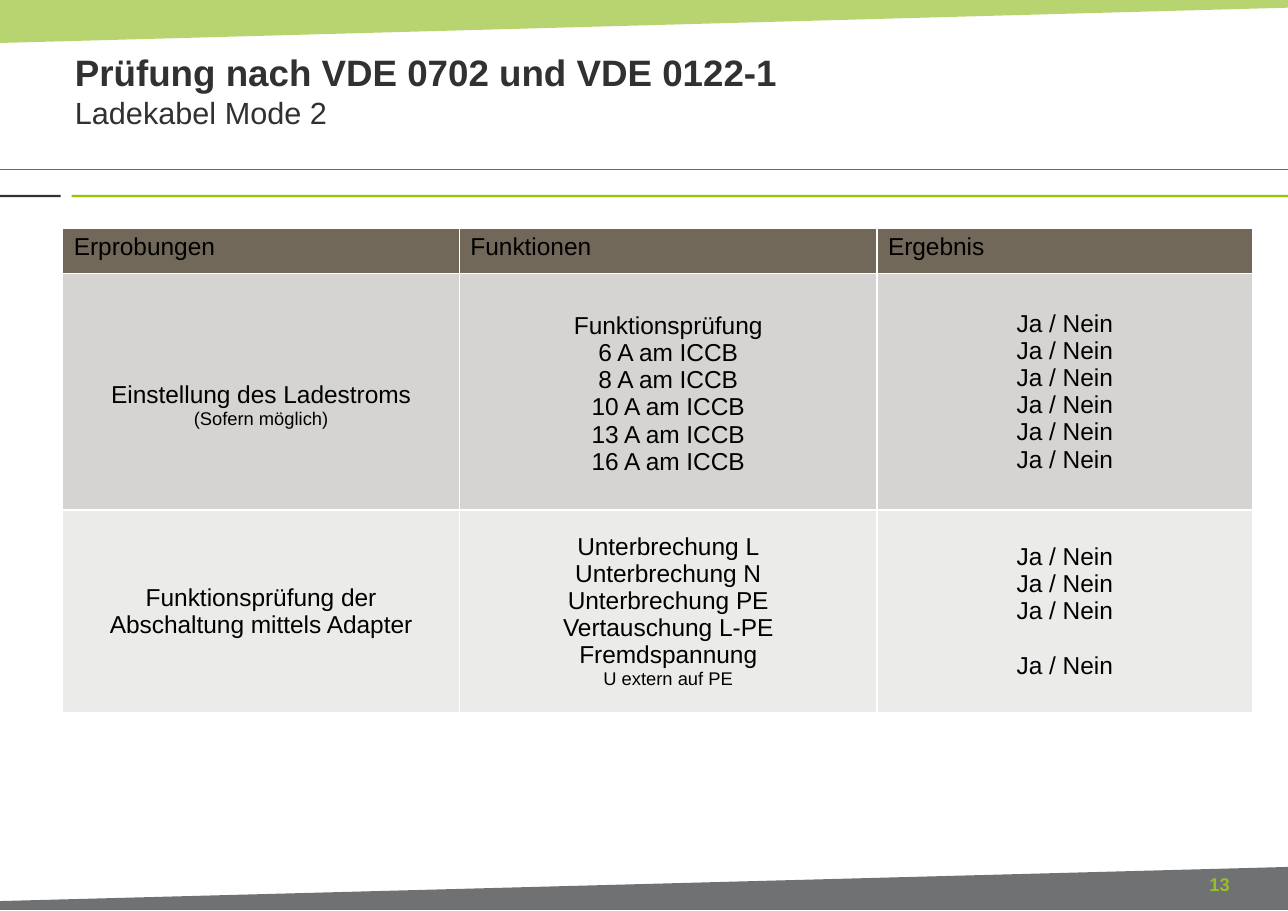
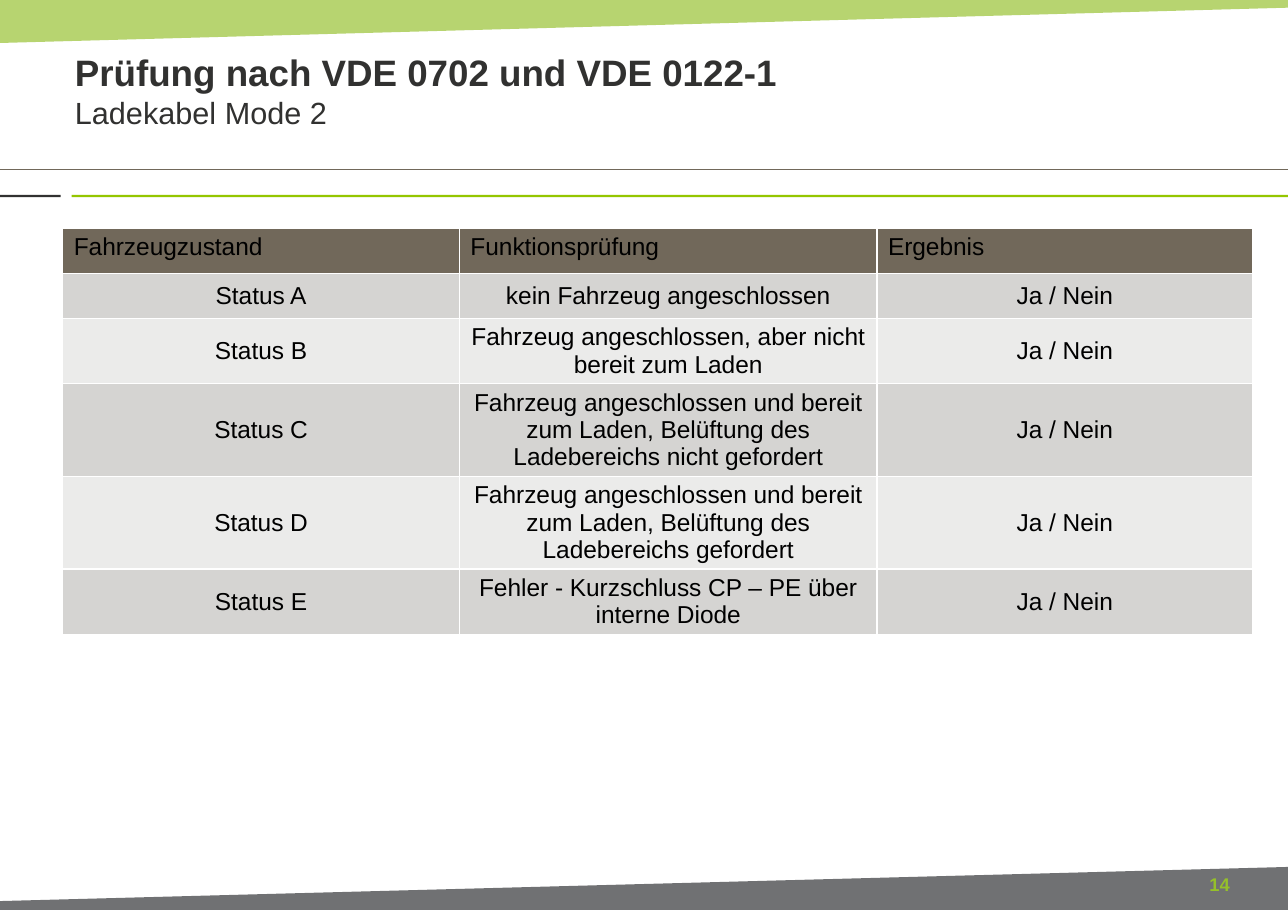
from lxml import etree
from pptx import Presentation
from pptx.dml.color import RGBColor
from pptx.enum.shapes import MSO_CONNECTOR, MSO_SHAPE
from pptx.enum.text import MSO_ANCHOR, PP_ALIGN
from pptx.oxml.ns import qn
from pptx.util import Inches, Pt

CENTER, LEFT = PP_ALIGN.CENTER, PP_ALIGN.LEFT
MIDDLE, TOP = MSO_ANCHOR.MIDDLE, MSO_ANCHOR.TOP
RECTANGLE, STRAIGHT = MSO_SHAPE.RECTANGLE, MSO_CONNECTOR.STRAIGHT

WIDTH, HEIGHT = 11.69, 8.27
FONT = "Arial"
COLORS = {
    "text": "000000", "title": "313130", "white": "FFFFFF",
    "green": "95C02A", "rule": "94C600", "footer": "707173",
    "header": "71685A", "odd": "D5D4D2", "even": "EBEBEA",
}
TITLE = "Prüfung nach VDE 0702 und VDE 0122-1"
SUBTITLE = "Ladekabel Mode 2"
RESULT = "Ja / Nein"
COLUMN_WIDTHS = [3.6, 3.79, 3.41]
TABLE_LEFT, TABLE_TOP = 0.57, 2.07
CELL_MARGIN = 0.05
BODY_SIZE, SMALL_SIZE = 16, 12
BLANK_LINE = 17.8

# A cell is a list of paragraphs; a paragraph is a text or (text, format).
SMALL = {"size": SMALL_SIZE}
PAGES = [
    {
        "number": 13,
        "header": ["Erprobungen", "Funktionen", "Ergebnis"],
        "heights": [0.41, 2.15, 1.84],
        "rows": [
            [
                ["Einstellung des Ladestroms", ("(Sofern möglich)", SMALL)],
                ["Funktionsprüfung"]
                + [f"{current} A am ICCB" for current in (6, 8, 10, 13, 16)],
                [RESULT] * 6,
            ],
            [
                ["Funktionsprüfung der\vAbschaltung mittels Adapter"],
                ["Unterbrechung L", "Unterbrechung N", "Unterbrechung PE",
                 "Vertauschung L-PE", "Fremdspannung",
                 ("U extern auf PE", SMALL)],
                [RESULT] * 3 + [(RESULT, {"before": BLANK_LINE})],
            ],
        ],
        "lowered": {(1, 0): 0.25, (1, 1): 0.04},
    },
    {
        "number": 14,
        "header": ["Fahrzeugzustand", "Funktionsprüfung", "Ergebnis"],
        "heights": [0.41, 0.41, 0.59, 0.84, 0.84, 0.59],
        "rows": [
            [[f"Status {letter}"], functions, [RESULT]]
            for letter, functions in [
                ("A", ["kein Fahrzeug angeschlossen"]),
                ("B", ["Fahrzeug angeschlossen, aber nicht bereit zum Laden"]),
                ("C", ["Fahrzeug angeschlossen und bereit zum Laden, Belüftung des",
                       "Ladebereichs nicht gefordert"]),
                ("D", ["Fahrzeug angeschlossen und bereit zum Laden, Belüftung des",
                       "Ladebereichs gefordert"]),
                ("E", ["Fehler - Kurzschluss CP – PE über interne Diode"]),
            ]
        ],
        "lowered": {},
    },
]


def color(name):
    return RGBColor.from_string(COLORS[name])


def write(paragraph, text, size=BODY_SIZE, ink="text", bold=False,
          align=LEFT, before=0, spacing=None):
    """Fill a paragraph; a vertical tab in the text is a line break."""
    paragraph.text = text
    paragraph.alignment = align
    paragraph.space_before = Pt(before)
    if spacing:
        paragraph.line_spacing = spacing
    for span in paragraph.runs:
        span.font.name = FONT
        span.font.size = Pt(size)
        span.font.bold = bold
        span.font.color.rgb = color(ink)
    for line_break in paragraph._p.findall(qn("a:br")):
        etree.SubElement(line_break, qn("a:rPr"), sz=str(size * 100))


def set_frame(frame, anchor=MIDDLE):
    frame.word_wrap = True
    frame.vertical_anchor = anchor
    frame.margin_left = frame.margin_right = Inches(0.11)
    frame.margin_top = frame.margin_bottom = Inches(0.06)


def paint(shape, fill):
    shape.shadow.inherit = False
    shape.fill.solid()
    shape.fill.fore_color.rgb = color(fill)
    shape.line.fill.background()
    return shape


def add_band(shapes, points, fill):
    corners = [(Inches(x), Inches(y)) for x, y in points]
    builder = shapes.build_freeform(*corners[0])
    builder.add_line_segments(corners[1:], close=True)
    return paint(builder.convert_to_shape(), fill)


def add_bar(shapes, left, top, width, height, fill):
    bar = shapes.add_shape(RECTANGLE, Inches(left), Inches(top),
                           Inches(width), Inches(height))
    return paint(bar, fill)


def decorate(layout, page):
    """Draw the shared bands and rules on a page, then move them to its layout."""
    shapes = page.shapes
    top_band = add_band(
        shapes, [(0, 0), (WIDTH, 0), (WIDTH, 0.07), (0, 0.39)], "green")
    tint = top_band._element.spPr.find(".//" + qn("a:srgbClr"))
    etree.SubElement(tint, qn("a:alpha"), val="67000")
    rule = shapes.add_connector(STRAIGHT, Inches(WIDTH), Inches(1.54),
                                Inches(0), Inches(1.54))
    rule.line.color.rgb = color("header")
    rule.line.width = Pt(0.75)
    etree.SubElement(rule._element.spPr, qn("a:effectLst"))
    parts = [
        top_band,
        add_bar(shapes, 0, 1.49, WIDTH, 0.39, "white"),
        add_bar(shapes, 0, 1.77, 0.55, 0.02, "title"),
        add_bar(shapes, 0.65, 1.77, WIDTH - 0.65, 0.02, "rule"),
        add_band(shapes, [(WIDTH, 8.26), (0, 8.26), (0, 8.18), (WIDTH, 7.87)],
                 "footer"),
        rule,
    ]
    for part in parts:
        layout.shapes._spTree.append(part._element)


def set_title(page):
    title = page.shapes.title
    title.left, title.top = Inches(0.57), Inches(0.35)
    title.width, title.height = Inches(7.32), Inches(0.93)
    set_frame(title.text_frame)
    paragraph = title.text_frame.paragraphs[0]
    write(paragraph, f"{TITLE}\v{SUBTITLE}", size=24, ink="title", bold=True)
    subtitle = paragraph.runs[-1]
    subtitle.font.size = Pt(20)
    subtitle.font.bold = False


def add_page_number(page, number):
    box = page.shapes.add_textbox(Inches(10.73), Inches(7.89),
                                  Inches(0.68), Inches(0.29))
    set_frame(box.text_frame)
    write(box.text_frame.paragraphs[0], str(number), size=12, ink="green",
          bold=True, align=CENTER, spacing=0.9)


def add_borders(cell):
    properties = cell._tc.get_or_add_tcPr()
    for side in ("lnL", "lnR", "lnT", "lnB"):
        line = etree.SubElement(properties, qn(f"a:{side}"), w=str(Pt(1)))
        fill = etree.SubElement(line, qn("a:solidFill"))
        etree.SubElement(fill, qn("a:srgbClr"), val=COLORS["white"])


def fill_cell(cell, paragraphs, fill, align, anchor, lowered):
    add_borders(cell)
    cell.fill.solid()
    cell.fill.fore_color.rgb = color(fill)
    cell.vertical_anchor = anchor
    cell.margin_top = Inches(CELL_MARGIN + lowered)
    cell.margin_bottom = Inches(CELL_MARGIN)
    frame = cell.text_frame
    for index, item in enumerate(paragraphs):
        text, style = (item, {}) if isinstance(item, str) else item
        paragraph = frame.add_paragraph() if index else frame.paragraphs[0]
        write(paragraph, text, align=align, **style)


def add_test_table(page, content):
    heights = content["heights"]
    rows = [[[label] for label in content["header"]]] + content["rows"]
    table = page.shapes.add_table(
        len(rows), len(COLUMN_WIDTHS), Inches(TABLE_LEFT), Inches(TABLE_TOP),
        Inches(sum(COLUMN_WIDTHS)), Inches(sum(heights))).table
    table.horz_banding = False
    for column, width in zip(table.columns, COLUMN_WIDTHS):
        column.width = Inches(width)
    for row_index, cells in enumerate(rows):
        table.rows[row_index].height = Inches(heights[row_index])
        if row_index == 0:
            look = ("header", LEFT, TOP)
        else:
            look = ("odd" if row_index % 2 else "even", CENTER, MIDDLE)
        for column_index, paragraphs in enumerate(cells):
            lowered = content["lowered"].get((row_index, column_index), 0)
            fill_cell(table.cell(row_index, column_index), paragraphs,
                      *look, lowered)


def main():
    deck = Presentation()
    deck.slide_width, deck.slide_height = Inches(WIDTH), Inches(HEIGHT)
    layout = deck.slide_layouts.get_by_name("Title Only")
    for index, content in enumerate(PAGES):
        page = deck.slides.add_slide(layout)
        if index == 0:
            decorate(layout, page)
        add_test_table(page, content)
        set_title(page)
        add_page_number(page, content["number"])
    deck.save("out.pptx")


if __name__ == "__main__":
    main()
